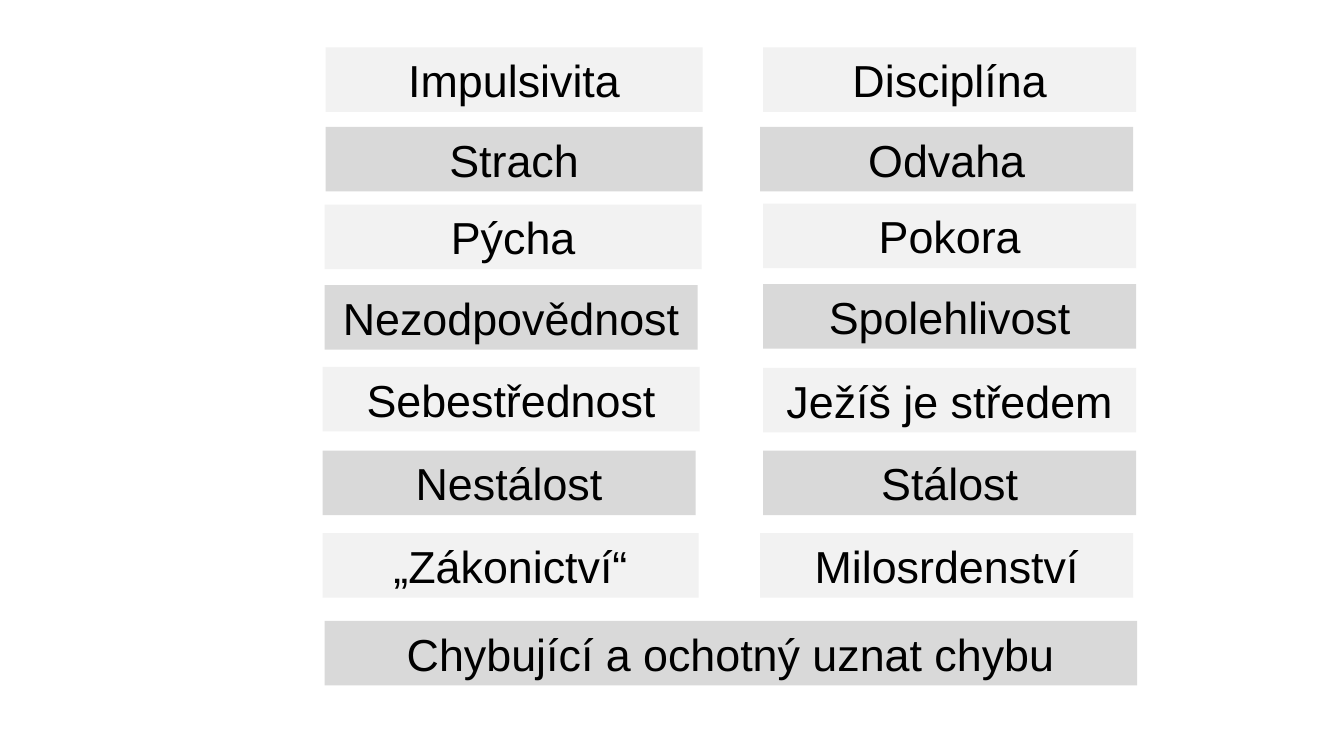
from pptx import Presentation
from pptx.dml.color import RGBColor
from pptx.enum.shapes import MSO_SHAPE
from pptx.enum.text import MSO_ANCHOR, MSO_AUTO_SIZE, PP_ALIGN
from pptx.util import Inches, Pt

BLACK = RGBColor(0x00, 0x00, 0x00)
LIGHT_GREY = RGBColor(0xF2, 0xF2, 0xF2)
MID_GREY = RGBColor(0xD9, 0xD9, 0xD9)

BAR_HEIGHT = 0.64
# Each bar: text, left, top, width
TRAIT_PAIRS = [
    (("Impulsivita", 3.23, 0.47, 3.74), ("Disciplína", 7.57, 0.47, 3.7)),
    (("Strach", 3.23, 1.26, 3.74), ("Odvaha", 7.54, 1.26, 3.7)),
    (("Pýcha", 3.22, 2.03, 3.74), ("Pokora", 7.57, 2.02, 3.7)),
    (("Nezodpovědnost", 3.22, 2.83, 3.7), ("Spolehlivost", 7.57, 2.82, 3.7)),
    (("Sebestřednost", 3.2, 3.64, 3.74), ("Ježíš je středem", 7.57, 3.65, 3.7)),
    (("Nestálost", 3.2, 4.47, 3.7), ("Stálost", 7.57, 4.47, 3.7)),
    (("„Zákonictví“", 3.2, 5.29, 3.73), ("Milosrdenství", 7.54, 5.29, 3.7)),
    (("Chybující a ochotný uznat chybu", 3.22, 6.16, 8.06),),
]


class TraitSlide:
    font_name = "Arial"
    font_size = Pt(32)

    def __init__(self, presentation):
        self.slide = presentation.slides.add_slide(presentation.slide_layouts[6])

    def add_bar(self, text, left, top, width, fill):
        shape = self.slide.shapes.add_shape(
            MSO_SHAPE.RECTANGLE,
            Inches(left), Inches(top), Inches(width), Inches(BAR_HEIGHT))
        shape.shadow.inherit = False
        shape.fill.solid()
        shape.fill.fore_color.rgb = fill
        shape.line.fill.background()
        frame = shape.text_frame
        frame.word_wrap = True
        frame.auto_size = MSO_AUTO_SIZE.SHAPE_TO_FIT_TEXT
        frame.vertical_anchor = MSO_ANCHOR.MIDDLE
        paragraph = frame.paragraphs[0]
        paragraph.text = text
        paragraph.alignment = PP_ALIGN.CENTER
        paragraph.font.name = self.font_name
        paragraph.font.size = self.font_size
        paragraph.font.color.rgb = BLACK


def main():
    presentation = Presentation()
    presentation.slide_width = Inches(13.33)
    presentation.slide_height = Inches(7.5)
    trait_slide = TraitSlide(presentation)
    for row, bars in enumerate(TRAIT_PAIRS):
        fill = MID_GREY if row % 2 else LIGHT_GREY
        for text, left, top, width in bars:
            trait_slide.add_bar(text, left, top, width, fill)
    presentation.save("out.pptx")


if __name__ == "__main__":
    main()
